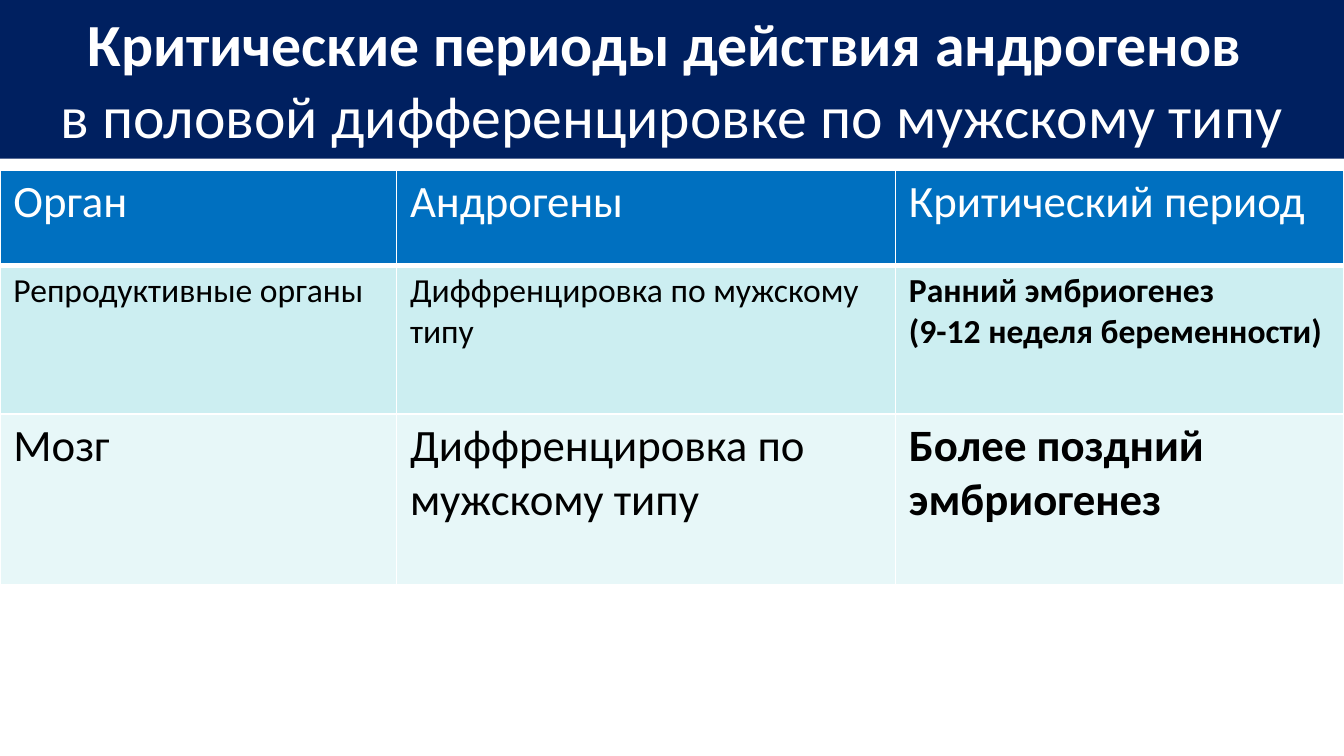
import pptx
import pptx.util
import pptx.dml.color
import pptx.enum.shapes
import pptx.enum.text
import pptx.oxml
from pptx.oxml.ns import nsdecls

Pt = pptx.util.Pt


def rgb(value):
    return pptx.dml.color.RGBColor.from_string(value)


class Deck:
    FONT = "Calibri"
    WHITE, BLACK, NAVY = "FFFFFF", "000000", "002060"
    HEADER, BAND, LIGHT = "0070C0", "CCEEF1", "E7F7F8"

    def __init__(self, width, height):
        self.prs = pptx.Presentation()
        self.prs.slide_width, self.prs.slide_height = Pt(width), Pt(height)
        self.s = self.prs.slides.add_slide(self.prs.slide_layouts[6])

    def add_lines(self, tf, lines, align=None):
        """Fill a text frame with (text, size, colour, bold) lines."""
        tf.word_wrap = True
        for i, (text, size, colour, bold) in enumerate(lines):
            p = tf.add_paragraph() if i else tf.paragraphs[0]
            p.alignment = align
            r = p.add_run()
            r.text = text
            style = {"name": self.FONT, "size": Pt(size), "bold": bold}
            for key, value in style.items():
                setattr(r.font, key, value)
            r.font.color.rgb = rgb(colour)

    def banner(self, x, y, w, h, lines):
        sp = self.s.shapes.add_shape(
            pptx.enum.shapes.MSO_SHAPE.RECTANGLE, Pt(x), Pt(y), Pt(w), Pt(h))
        sp.shadow.inherit = False
        sp.fill.solid()
        sp.fill.fore_color.rgb = rgb(self.NAVY)
        sp.line.fill.background()
        tf = sp.text_frame
        tf.vertical_anchor = pptx.enum.text.MSO_ANCHOR.TOP
        self.add_lines(tf, lines, pptx.enum.text.PP_ALIGN.CENTER)
        tf.auto_size = pptx.enum.text.MSO_AUTO_SIZE.SHAPE_TO_FIT_TEXT

    def border(self, cell, bottom):
        tcPr = cell._tc.get_or_add_tcPr()
        for side, width in {"L": 1, "R": 1, "T": 1, "B": bottom}.items():
            tcPr.append(pptx.oxml.parse_xml(
                f'<a:ln{side} {nsdecls("a")} w="{Pt(width)}"><a:solidFill>'
                f'<a:srgbClr val="{self.WHITE}"/></a:solidFill></a:ln{side}>'))

    def table(self, x, y, widths, rows):
        """Each row is (height, fill, colour, size, bold last cell, texts)."""
        height = sum(row[0] for row in rows)
        table = self.s.shapes.add_table(
            len(rows), len(widths), Pt(x), Pt(y), Pt(sum(widths)), Pt(height)).table
        for column, width in zip(table.columns, widths):
            column.width = Pt(width)
        margins = {"margin_left": 7.2, "margin_right": 7.2,
                   "margin_top": 2.7, "margin_bottom": 2.7}
        for i, (row_height, fill, colour, size, bold_last, texts) in enumerate(rows):
            table.rows[i].height = Pt(row_height)
            for j, text in enumerate(texts):
                cell = table.cell(i, j)
                for key, value in margins.items():
                    setattr(cell, key, Pt(value))
                self.border(cell, bottom=1 if i else 3)
                cell.fill.solid()
                cell.fill.fore_color.rgb = rgb(fill)
                bold = bold_last and j == len(texts) - 1
                self.add_lines(cell.text_frame,
                               [(line, size, colour, bold) for line in text.split("\n")])


def main():
    d = Deck(720, 405)

    # Title banner
    d.banner(0, 0, 720, 85, [
        ("Критические периоды действия андрогенов ", 32, d.WHITE, True),
        ("в половой дифференцировке по мужскому типу", 32, d.WHITE, False),
    ])

    # Table of organs and critical periods
    d.table(0, 91.2, [212.5, 267.3, 239.9], [
        (51, d.HEADER, d.WHITE, 24, False,
         ["Орган", "Андрогены", "Критический период"]),
        (79.5, d.BAND, d.BLACK, 18, True,
         ["Репродуктивные органы", "Диффренцировка по мужскому типу",
          "Ранний эмбриогенез\n(9-12 неделя беременности)"]),
        (91.7, d.LIGHT, d.BLACK, 24, True,
         ["Мозг", "Диффренцировка по мужскому типу", "Более поздний эмбриогенез"]),
    ])

    d.prs.save("out.pptx")


if __name__ == "__main__":
    main()
